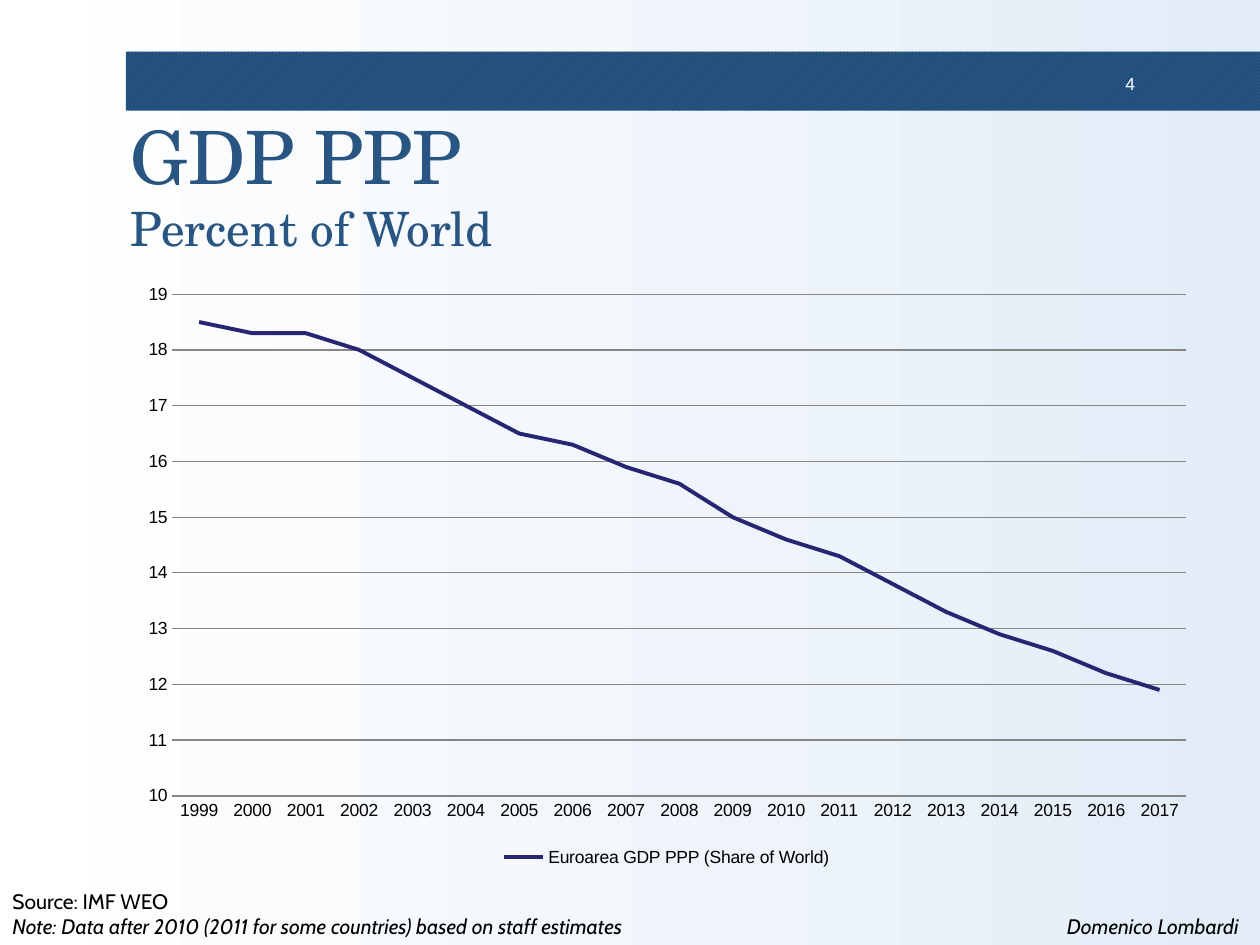
from lxml import etree
from pptx import Presentation
from pptx.chart.data import CategoryChartData
from pptx.dml.color import RGBColor
from pptx.enum.chart import XL_CHART_TYPE, XL_LEGEND_POSITION, XL_TICK_MARK
from pptx.enum.dml import MSO_PATTERN
from pptx.enum.shapes import MSO_SHAPE
from pptx.enum.text import MSO_ANCHOR, MSO_AUTO_SIZE, PP_ALIGN
from pptx.oxml.ns import qn
from pptx.util import Cm, Pt

# Content
TITLE, SUBTITLE = "GDP PPP", "Percent of World"
PAGE = "4"
NOTES = [("Source: IMF WEO", False),
         ("Note: Data after 2010 (2011 for some countries) based on staff estimates", True)]
AUTHOR = [("Domenico Lombardi", True)]
SERIES = "Euroarea GDP PPP (Share of World)"
FIRST_YEAR = 1999
SHARES = [18.5, 18.3, 18.3, 18, 17.5, 17, 16.5, 16.3, 15.9, 15.6,
          15, 14.6, 14.3, 13.8, 13.3, 12.9, 12.6, 12.2, 11.9]


class Theme:
    blue, stripe = RGBColor(0x29, 0x55, 0x82), RGBColor(0x08, 0x38, 0x68)
    white, pale = RGBColor(255, 255, 255), RGBColor(0xE3, 0xED, 0xF7)
    black, grid = RGBColor(0, 0, 0), RGBColor(0x86, 0x86, 0x86)
    line = RGBColor(0x26, 0x26, 0x73)
    head, label, foot = "TeX Gyre Schola", "Arial", "Cabin"
    title, subtitle, note, small = Pt(42), Pt(27), Pt(12), Pt(10)


def set_font(font, name, size, color, italic=None):
    font.name, font.size, font.italic = name, size, italic
    font.color.rgb = color


def add_text(s, box, lines, name, size, color, align=PP_ALIGN.LEFT, wrap=False):
    tf = s.shapes.add_textbox(*map(Cm, box)).text_frame
    tf.word_wrap = wrap
    for i, (text, italic) in enumerate(lines):
        p = tf.add_paragraph() if i else tf.paragraphs[0]
        p.text, p.alignment = text, align
        set_font(p.font, name, size, color, italic)
    return tf


prs = Presentation()
prs.slide_width, prs.slide_height = Cm(25.4), Cm(19.05)
s = prs.slides.add_slide(prs.slide_layouts[5])

# Background
fill = s.background.fill
fill.gradient()
fill.gradient_angle = 0
for stop, color in zip(fill.gradient_stops, (Theme.white, Theme.pale)):
    stop.color.rgb = color

# Header band and page number
band = s.shapes.add_shape(MSO_SHAPE.RECTANGLE, Cm(2.54), Cm(1.04), Cm(22.86), Cm(1.19))
band.shadow.inherit = False
band.line.fill.background()
band.fill.patterned()
band.fill.pattern = MSO_PATTERN.LIGHT_UPWARD_DIAGONAL
band.fill.fore_color.rgb, band.fill.back_color.rgb = Theme.stripe, Theme.blue
tf = add_text(s, (22.02, 1.37, 1.04, 0.6), [(PAGE, None)], Theme.label, Theme.small,
              Theme.white, PP_ALIGN.RIGHT, True)
tf.margin_left = tf.margin_right = Cm(0.18)
tf.margin_top = tf.margin_bottom = Cm(0.1)

# Title
title = s.shapes.title
title.left, title.top, title.width, title.height = map(Cm, (2.54, 2.11, 22.86, 3.18))
tf = title.text_frame
tf.auto_size, tf.vertical_anchor = MSO_AUTO_SIZE.NONE, MSO_ANCHOR.MIDDLE
tf.margin_left = tf.margin_right = tf.margin_top = tf.margin_bottom = Cm(0.1)
p = tf.paragraphs[0]
p.alignment = PP_ALIGN.LEFT
for text, size in ((TITLE + " ", Theme.title), (SUBTITLE, Theme.subtitle)):
    if p.runs:
        p.add_line_break()
    r = p.add_run()
    r.text = text
    set_font(r.font, Theme.head, size, Theme.blue)

# Chart
data = CategoryChartData()
data.categories = [str(FIRST_YEAR + i) for i in range(len(SHARES))]
data.add_series(SERIES, SHARES)
chart = s.shapes.add_chart(XL_CHART_TYPE.LINE, Cm(2.54), Cm(5.51), Cm(21.79), Cm(12.07),
                           data).chart
set_font(chart.font, Theme.label, Theme.small, Theme.black)
chart.has_title = False
chart.has_legend = True
chart.legend.position = XL_LEGEND_POSITION.BOTTOM
chart.legend.include_in_layout = False

plot = chart.plots[0]
plot.vary_by_categories = False
series = plot.series[0]
series.smooth = False
series.format.line.color.rgb, series.format.line.width = Theme.line, Pt(2.25)

years, values = chart.category_axis, chart.value_axis
for axis in (years, values):
    axis.major_tick_mark = axis.minor_tick_mark = XL_TICK_MARK.NONE
years.format.line.color.rgb = Theme.grid
values.minimum_scale, values.maximum_scale, values.major_unit = 10, 19, 1
values.tick_labels.number_format = "0"
values.tick_labels.number_format_is_linked = False
values.format.line.fill.background()
values.has_major_gridlines = True
values.major_gridlines.format.line.color.rgb = Theme.grid
values.major_gridlines.format.line.width = Pt(0.75)

# Plot area position, as shares of the chart frame
area = chart.element.find(".//" + qn("c:plotArea"))
layout = area.find(qn("c:layout"))
if layout is None:
    layout = etree.Element(qn("c:layout"))
    area.insert(0, layout)
manual = etree.SubElement(layout, qn("c:manualLayout"))
for tag, val in (("layoutTarget", "inner"), ("xMode", "edge"), ("yMode", "edge"),
                 ("x", "0.043"), ("y", "0.035"), ("w", "0.938"), ("h", "0.838")):
    etree.SubElement(manual, qn("c:" + tag)).set("val", val)

# Source note and author
add_text(s, (0, 17.78, 14.27, 1.8), NOTES, Theme.foot, Theme.note, Theme.black)
add_text(s, (21.08, 18.29, 4.32, 0.76), AUTHOR, Theme.foot, Theme.note, Theme.black,
         PP_ALIGN.CENTER)

prs.save("out.pptx")
